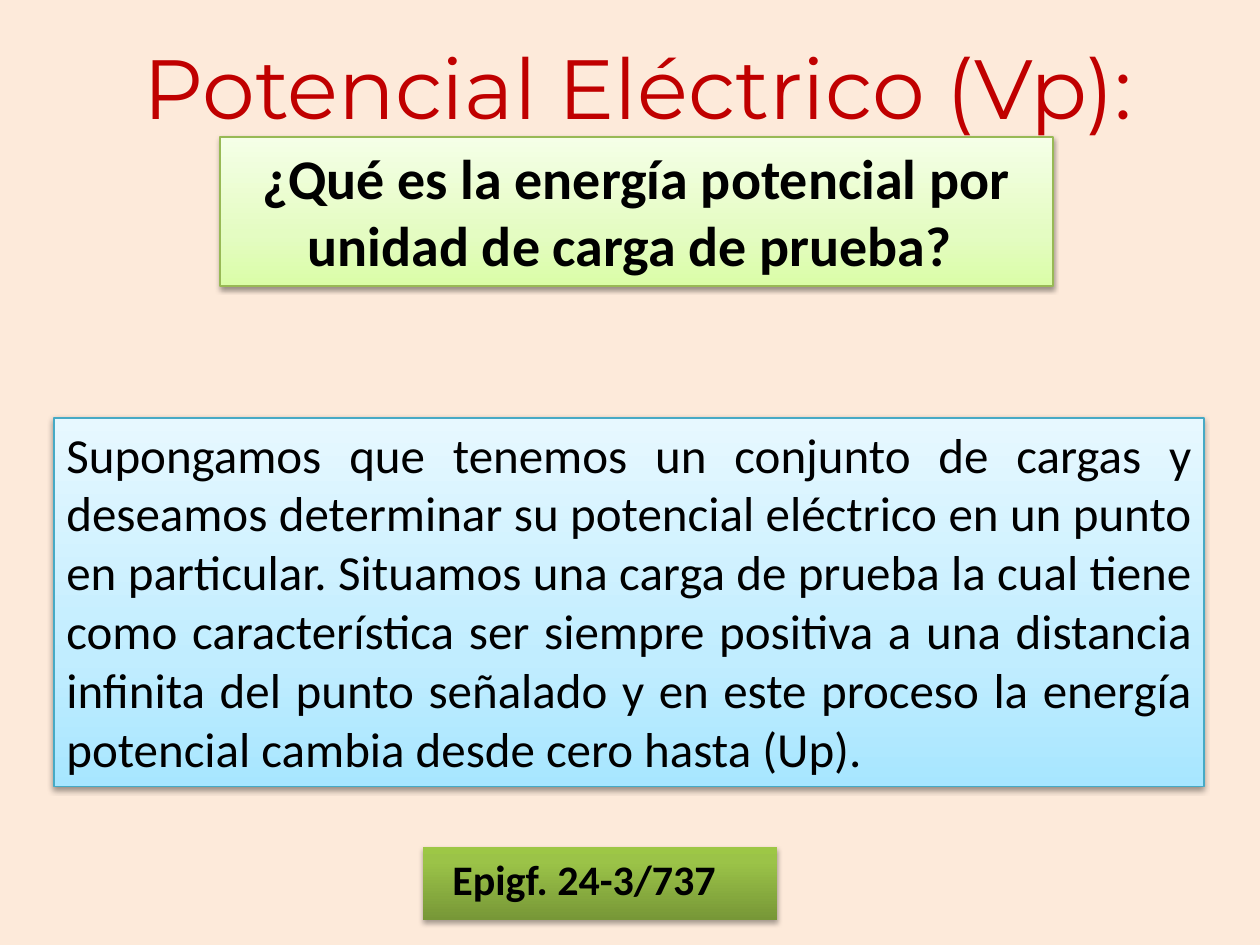
from copy import deepcopy

from pptx import Presentation
from pptx.dml.color import RGBColor
from pptx.enum.shapes import MSO_SHAPE
from pptx.enum.text import MSO_ANCHOR, MSO_AUTO_SIZE, PP_ALIGN
from pptx.oxml import parse_xml
from pptx.oxml.ns import nsdecls
from pptx.util import Emu, Pt

PX = 914400 // 126

PEACH = RGBColor(0xFD, 0xEA, 0xDA)
DARK_RED = RGBColor(0xC0, 0x00, 0x00)
BLACK = RGBColor(0x00, 0x00, 0x00)
GREEN_EDGE = RGBColor(0x98, 0xB9, 0x55)
BLUE_EDGE = RGBColor(0x46, 0xAA, 0xC5)
LIME = ((0, RGBColor(0xDA, 0xFD, 0xA7)), (0.35, RGBColor(0xE4, 0xFC, 0xC2)),
        (1, RGBColor(0xF5, 0xFF, 0xE7)))
SKY = ((0, RGBColor(0xA7, 0xE6, 0xFF)), (0.35, RGBColor(0xC1, 0xED, 0xFF)),
       (1, RGBColor(0xE7, 0xF8, 0xFF)))
OLIVE = ((0, RGBColor(0x77, 0x97, 0x37)), (0.8, RGBColor(0x9B, 0xC3, 0x48)),
         (1, RGBColor(0x9D, 0xC7, 0x46)))


def px(*lengths):
    return [Emu(length * PX) for length in lengths]


def fill_gradient(shape, stops):
    """Fill from bottom to top with (position, colour) stops."""
    shape.fill.gradient()
    shape.fill.gradient_angle = 90
    last_stop = shape._element.spPr.gradFill.gsLst[-1]
    for _ in stops[2:]:
        last_stop.addnext(deepcopy(last_stop))
    for stop, (position, colour) in zip(shape.fill.gradient_stops, stops):
        stop.position = position
        stop.color.rgb = colour


def cast_shadow(shape, distance, opacity):
    """Add a soft downward shadow; opacity is in percent."""
    shape.shadow.inherit = False
    shape._element.spPr.find("{*}effectLst").append(parse_xml(
        f'<a:outerShdw {nsdecls("a")} blurRad="{Pt(3.1)}" dist="{Pt(distance)}" '
        f'dir="5400000" rotWithShape="0"><a:srgbClr val="000000">'
        f'<a:alpha val="{opacity * 1000}"/></a:srgbClr></a:outerShdw>'))


def add_panel(shapes, box, stops, edge=None, shadow=(1.6, 38)):
    panel = shapes.add_shape(MSO_SHAPE.RECTANGLE, *px(*box))
    fill_gradient(panel, stops)
    if edge is None:
        panel.line.fill.background()
    else:
        panel.line.color.rgb = edge
        panel.line.width = Pt(0.75)
    cast_shadow(panel, *shadow)
    return panel


def write(shape, text, size, align, bold=False, font="Calibri", colour=BLACK,
          fit=MSO_AUTO_SIZE.SHAPE_TO_FIT_TEXT):
    frame = shape.text_frame
    frame.word_wrap = True
    frame.auto_size = fit
    frame.vertical_anchor = MSO_ANCHOR.TOP
    paragraph = frame.paragraphs[0]
    paragraph.alignment = align
    run = paragraph.add_run()
    run.text = text
    run.font.name = font
    run.font.size = Pt(size)
    run.font.bold = bold
    run.font.color.rgb = colour


def place_title(title, box, text):
    title.left, title.top, title.width, title.height = px(*box)
    write(title, text, 48, PP_ALIGN.CENTER, font="Montserrat", colour=DARK_RED,
          fit=MSO_AUTO_SIZE.NONE)


def add_reference(shapes, panel_box, label_box, text):
    """Group a panel with the textbook reference over it."""
    reference = shapes.add_group_shape().shapes
    add_panel(reference, panel_box, OLIVE, shadow=(1.8, 35))
    write(reference.add_textbox(*px(*label_box)), text, 24, PP_ALIGN.LEFT, bold=True)


def main():
    presentation = Presentation()
    presentation.slide_width, presentation.slide_height = px(1260, 945)
    slide = presentation.slides.add_slide(presentation.slide_layouts[5])
    slide.background.fill.solid()
    slide.background.fill.fore_color.rgb = PEACH
    shapes = slide.shapes

    question = add_panel(shapes, (220, 137, 833, 149), LIME, GREEN_EDGE)
    write(question, "¿Qué es la energía potencial por unidad de carga de prueba? ",
          32, PP_ALIGN.CENTER, bold=True)

    title = shapes.title
    place_title(title, (99, 29, 1100, 78), "Potencial Eléctrico (Vp): ")
    question._element.addnext(title._element)

    explanation = add_panel(shapes, (54, 418, 1150, 369), SKY, BLUE_EDGE)
    write(explanation,
          "Supongamos que tenemos un conjunto de cargas y deseamos determinar su "
          "potencial eléctrico en un punto en particular. Situamos una carga de "
          "prueba la cual tiene como característica ser siempre positiva a una "
          "distancia infinita del punto señalado y en este proceso la energía "
          "potencial cambia desde cero hasta (Up).",
          28, PP_ALIGN.JUSTIFY)

    add_reference(shapes, (423, 847, 354, 73), (440, 847, 378, 63), "Epigf. 24-3/737")
    presentation.save("out.pptx")


if __name__ == "__main__":
    main()
